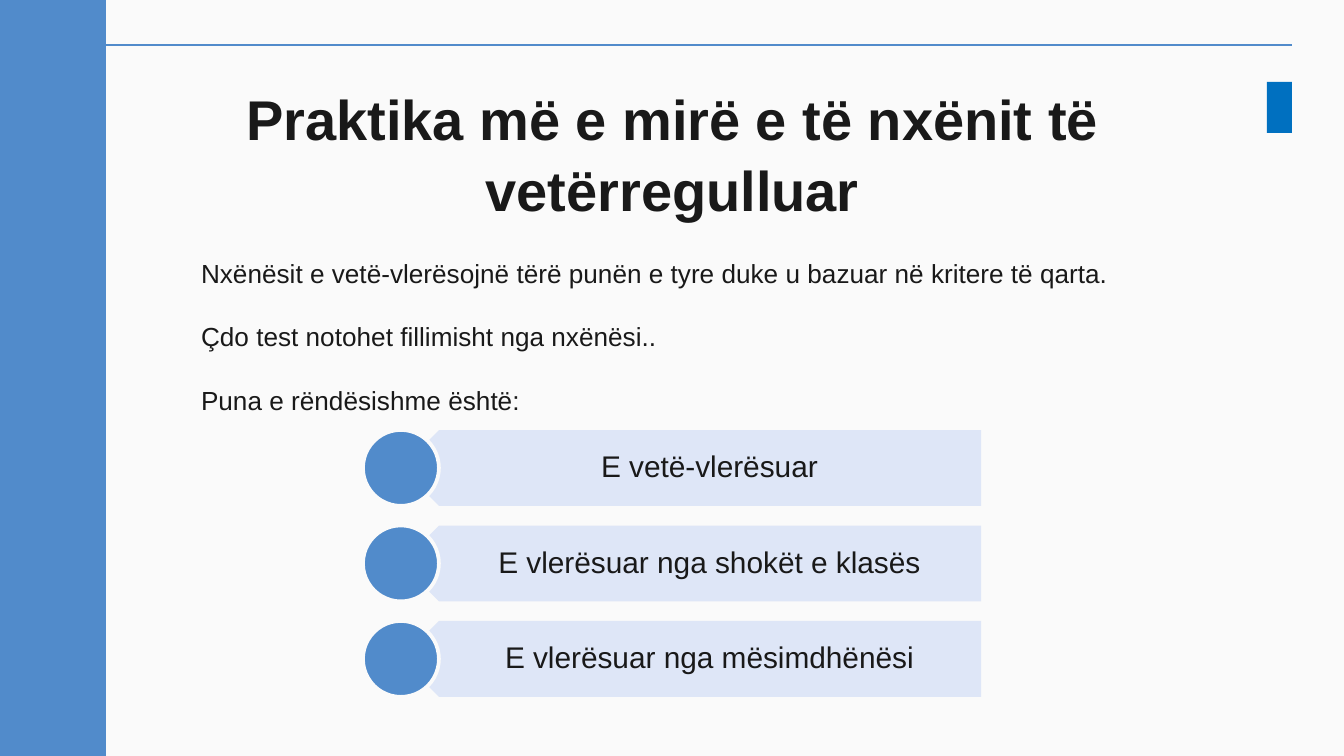
from lxml import etree
from pptx import Presentation
from pptx.dml.color import RGBColor
from pptx.enum import shapes, text
from pptx.oxml.ns import qn
from pptx.util import Emu, Pt

EMU_PER_PX = 914400 / 134.4
COLORS = {"paper": "FAFAFA", "band": "518BCB", "accent": "0070C0",
          "bar": "DEE6F7", "ink": "191919"}
TITLE = "Praktika më e mirë e të nxënit të vetërregulluar"
POINTS = ["Nxënësit e vetë-vlerësojnë tërë punën e tyre duke u bazuar në kritere të qarta.",
          "Çdo test notohet fillimisht nga nxënësi..",
          "Puna e rëndësishme është:"]
STEPS = ["E vetë-vlerësuar", "E vlerësuar nga shokët e klasës",
         "E vlerësuar nga mësimdhënësi"]


def px(length):
    return Emu(round(length * EMU_PER_PX))


def color(name):
    return RGBColor.from_string(COLORS[name])


def apply(target, values):
    for name, value in values.items():
        setattr(target, name, value)


def place(shape, box):
    apply(shape, dict(zip(("left", "top", "width", "height"), map(px, box))))


def set_frame(frame, insets, anchor):
    sides = ("margin_left", "margin_top", "margin_right", "margin_bottom")
    apply(frame, dict(zip(sides, map(px, insets))))
    apply(frame, {"word_wrap": True, "vertical_anchor": anchor,
                  "auto_size": text.MSO_AUTO_SIZE.NONE})


def write(para, wording, size, bold=False, **layout):
    apply(para, layout)
    span = para.add_run()
    span.text = wording
    apply(span.font, {"name": "Arial", "size": Pt(size), "bold": bold})
    span.font.color.rgb = color("ink")


def add_block(page, kind, box, fill, outline=None):
    block = page.shapes.add_shape(kind, *map(px, box))
    block.shadow.inherit = False
    block.fill.solid()
    block.fill.fore_color.rgb = color(fill)
    if outline:
        block.line.color.rgb = color(outline)
        block.line.width = Pt(2)
    else:
        block.line.fill.background()
    return block


def add_frame_decor(page, width, height):
    # Thin rule along the top, partly behind the side band
    rule = page.shapes.add_connector(shapes.MSO_CONNECTOR.STRAIGHT,
                                     px(7), px(45), px(width - 52), px(45))
    rule.line.color.rgb = color("band")
    rule.line.width = Pt(0.75)
    etree.SubElement(rule._element.spPr, qn("a:effectLst"))
    # Side band and corner marker
    rectangle = shapes.MSO_SHAPE.RECTANGLE
    add_block(page, rectangle, (0, 0, 106, height), "band")
    add_block(page, rectangle, (width - 77, 82, 25, 51), "accent")


def fill_title(page, box):
    title = page.shapes.title
    place(title, box)
    set_frame(title.text_frame, (13, 13, 13, 13), text.MSO_ANCHOR.TOP)
    write(title.text_frame.paragraphs[0], TITLE, 30, bold=True,
          alignment=text.PP_ALIGN.CENTER, line_spacing=1.06)


def fill_body(page, box):
    body = page.placeholders[1]
    place(body, box)
    frame = body.text_frame
    set_frame(frame, (13, 78, 13, 13), text.MSO_ANCHOR.TOP)
    for index, point in enumerate(POINTS):
        para = frame.add_paragraph() if index else frame.paragraphs[0]
        write(para, point, 14, alignment=text.PP_ALIGN.LEFT,
              space_before=Pt(0), space_after=Pt(17.4))
        # Plain indented paragraph without a bullet
        properties = para._p.get_or_add_pPr()
        properties.set("marL", str(px(23)))
        properties.set("indent", "0")
        etree.SubElement(properties, qn("a:buNone"))


def add_steps(page, box):
    left, top, width, height = box
    size = 76
    pitch = (height - size) / (len(STEPS) - 1)
    for index, step in enumerate(STEPS):
        y = top + index * pitch
        # Bar pointing left
        bar = add_block(page, shapes.MSO_SHAPE.PENTAGON,
                        (left + size / 2, y, width - size / 2, size), "bar")
        bar.rotation = 180
        # Label beside the point of the bar
        label = page.shapes.add_textbox(
            *map(px, (left + 57, y, width - 57, size)))
        set_frame(label.text_frame, (34, 9, 16, 9), text.MSO_ANCHOR.MIDDLE)
        write(label.text_frame.paragraphs[0], step, 16,
              alignment=text.PP_ALIGN.CENTER, line_spacing=0.9)
        # Disc over the point
        add_block(page, shapes.MSO_SHAPE.OVAL, (left, y, size, size),
                  "band", outline="paper")


def main():
    width, height = 1344, 756
    deck = Presentation()
    apply(deck, {"slide_width": px(width), "slide_height": px(height)})
    page = deck.slides.add_slide(deck.slide_layouts[1])
    page.background.fill.solid()
    page.background.fill.fore_color.rgb = color("paper")
    add_frame_decor(page, width, height)
    fill_title(page, (106, 67, 1133, 85))
    fill_body(page, (165, 179, 1073, 503))
    add_steps(page, (363, 430, 618, 267))
    deck.save("out.pptx")


if __name__ == "__main__":
    main()
